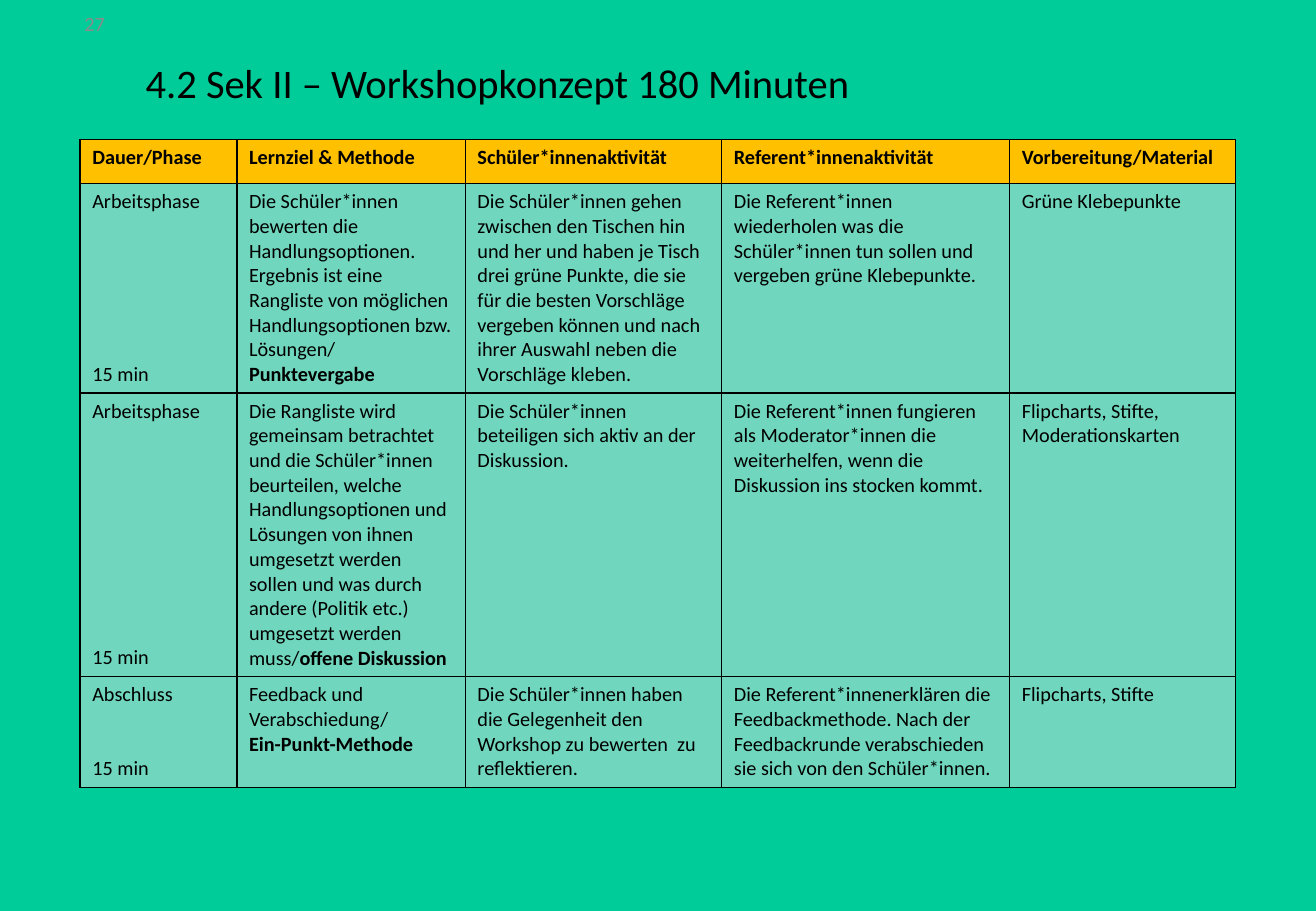
import dataclasses

import lxml.etree
import pptx
import pptx.dml.color
import pptx.enum.text
import pptx.oxml.ns
import pptx.util

Inches = pptx.util.Inches
Pt = pptx.util.Pt
qn = pptx.oxml.ns.qn
ALIGN = pptx.enum.text.PP_ALIGN
ANCHOR = pptx.enum.text.MSO_ANCHOR

COLORS = {
    "background": "00CC99",
    "header": "FFC000",
    "body": "E1E1E1",
    "text": "000000",
    "number": "8C8C8C",
    "border": "000000",
}
LINE_PT = 14.6
COLUMN_WIDTHS = [1.29, 1.88, 2.11, 2.37, 1.86]
HEADER_HEIGHT = 0.36
HEADINGS = [
    "Dauer/Phase",
    "Lernziel & Methode",
    "Schüler*innenaktivität",
    "Referent*innenaktivität",
    "Vorbereitung/Material",
]


@dataclasses.dataclass
class Run:
    text: str
    bold: bool = False


@dataclasses.dataclass
class Para:
    runs: list[Run]
    lines_before: int = 0


@dataclasses.dataclass
class Phase:
    name: str
    lines_to_duration: int
    height: float
    goal: list[Para]
    pupils: str
    speakers: str
    material: str

    def cells(self) -> list[list[Para]]:
        duration = Para([Run("15 min")], self.lines_to_duration)
        texts = [self.pupils, self.speakers, self.material]
        return [[Para([Run(self.name)]), duration], self.goal] + [[Para([Run(t)])] for t in texts]


@dataclasses.dataclass
class Label:
    text: str
    box: tuple[float, float, float, float]
    size: int
    color: str
    align: ALIGN
    spacing: float


PHASES = [
    Phase(
        "Arbeitsphase", 6, 1.72,
        [
            Para([Run("Die Schüler*innen bewerten die Handlungsoptionen. Ergebnis ist eine "
                      "Rangliste von möglichen Handlungsoptionen bzw. Lösungen/")]),
            Para([Run("Punktevergabe", True)]),
        ],
        "Die Schüler*innen gehen zwischen den Tischen hin und her und haben je Tisch drei grüne "
        "Punkte, die sie für die besten Vorschläge vergeben können und nach ihrer Auswahl neben "
        "die Vorschläge kleben.",
        "Die Referent*innen wiederholen was die Schüler*innen tun sollen und vergeben grüne "
        "Klebepunkte.",
        "Grüne Klebepunkte",
    ),
    Phase(
        "Arbeitsphase", 9, 2.33,
        [
            Para([
                Run("Die Rangliste wird gemeinsam betrachtet und die Schüler*innen beurteilen, "
                    "welche Handlungsoptionen und Lösungen von ihnen umgesetzt werden sollen und "
                    "was durch andere (Politik etc.) umgesetzt werden muss/"),
                Run("offene Diskussion", True),
            ]),
        ],
        "Die Schüler*innen beteiligen sich aktiv an der Diskussion.",
        "Die Referent*innen fungieren als Moderator*innen die weiterhelfen, wenn die Diskussion "
        "ins stocken kommt.",
        "Flipcharts, Stifte, Moderationskarten",
    ),
    Phase(
        "Abschluss", 2, 0.91,
        [
            Para([Run("Feedback und Verabschiedung/")]),
            Para([Run("Ein-Punkt-Methode", True)]),
        ],
        "Die Schüler*innen haben die Gelegenheit den Workshop zu bewerten  zu reflektieren.",
        "Die Referent*innenerklären die Feedbackmethode. Nach der Feedbackrunde verabschieden "
        "sie sich von den Schüler*innen.",
        "Flipcharts, Stifte",
    ),
]

LABELS = [
    Label("4.2 Sek II – Workshopkonzept 180 Minuten", (1.1, 0.36, 8.62, 0.68),
          24, "text", ALIGN.LEFT, 0.9),
    Label("27", (-0.44, -0.01, 2.44, 0.4), 12, "number", ALIGN.CENTER, 1.0),
]


def rgb(name: str) -> pptx.dml.color.RGBColor:
    return pptx.dml.color.RGBColor.from_string(COLORS[name])


def add_run(p, run: Run, size: int = 12, color: str = "text") -> None:
    r = p.add_run()
    r.text = run.text
    for key, value in {"name": "Calibri", "size": Pt(size), "bold": run.bold}.items():
        setattr(r.font, key, value)
    r.font.color.rgb = rgb(color)


def add_label(slide, label: Label) -> None:
    tf = slide.shapes.add_textbox(*map(Inches, label.box)).text_frame
    for key, value in {"word_wrap": True, "vertical_anchor": ANCHOR.MIDDLE}.items():
        setattr(tf, key, value)
    p = tf.paragraphs[0]
    for key, value in {"alignment": label.align, "line_spacing": label.spacing}.items():
        setattr(p, key, value)
    add_run(p, Run(label.text), label.size, label.color)


def style_cell(cell, fill: str, alpha: int) -> None:
    cell.fill.solid()
    cell.fill.fore_color.rgb = rgb(fill)
    tc_pr = cell._tc.get_or_add_tcPr()
    if alpha < 100:
        clr = tc_pr.find(qn("a:solidFill")).find(qn("a:srgbClr"))
        lxml.etree.SubElement(clr, qn("a:alpha"), val=str(alpha * 1000))
    for i, side in enumerate("LRTB"):
        ln = lxml.etree.Element(qn(f"a:ln{side}"), w=str(Pt(1)))
        line_fill = lxml.etree.SubElement(ln, qn("a:solidFill"))
        lxml.etree.SubElement(line_fill, qn("a:srgbClr"), val=COLORS["border"])
        tc_pr.insert(i, ln)


def fill_cell(cell, paras: list[Para]) -> None:
    tf = cell.text_frame
    for i, para in enumerate(paras):
        p = tf.add_paragraph() if i else tf.paragraphs[0]
        if para.lines_before:
            p.space_before = Pt(para.lines_before * LINE_PT)
        for run in para.runs:
            add_run(p, run)


def add_plan(slide) -> None:
    heights = [HEADER_HEIGHT] + [phase.height for phase in PHASES]
    rows = [[[Para([Run(h, True)])] for h in HEADINGS]] + [phase.cells() for phase in PHASES]
    table = slide.shapes.add_table(
        len(rows), len(HEADINGS), Inches(0.66), Inches(1.15),
        Inches(sum(COLUMN_WIDTHS)), Inches(sum(heights)),
    ).table
    for column, width in zip(table.columns, COLUMN_WIDTHS):
        column.width = Inches(width)
    for i, (row, height) in enumerate(zip(rows, heights)):
        table.rows[i].height = Inches(height)
        for j, paras in enumerate(row):
            cell = table.cell(i, j)
            fill_cell(cell, paras)
            style_cell(cell, "body" if i else "header", 50 if i else 100)


def main() -> None:
    prs = pptx.Presentation()
    prs.slide_width, prs.slide_height = Inches(10.83), Inches(7.5)
    s = prs.slides.add_slide(prs.slide_layouts[6])
    s.background.fill.solid()
    s.background.fill.fore_color.rgb = rgb("background")
    add_plan(s)
    for label in LABELS:
        add_label(s, label)
    prs.save("out.pptx")


if __name__ == "__main__":
    main()
